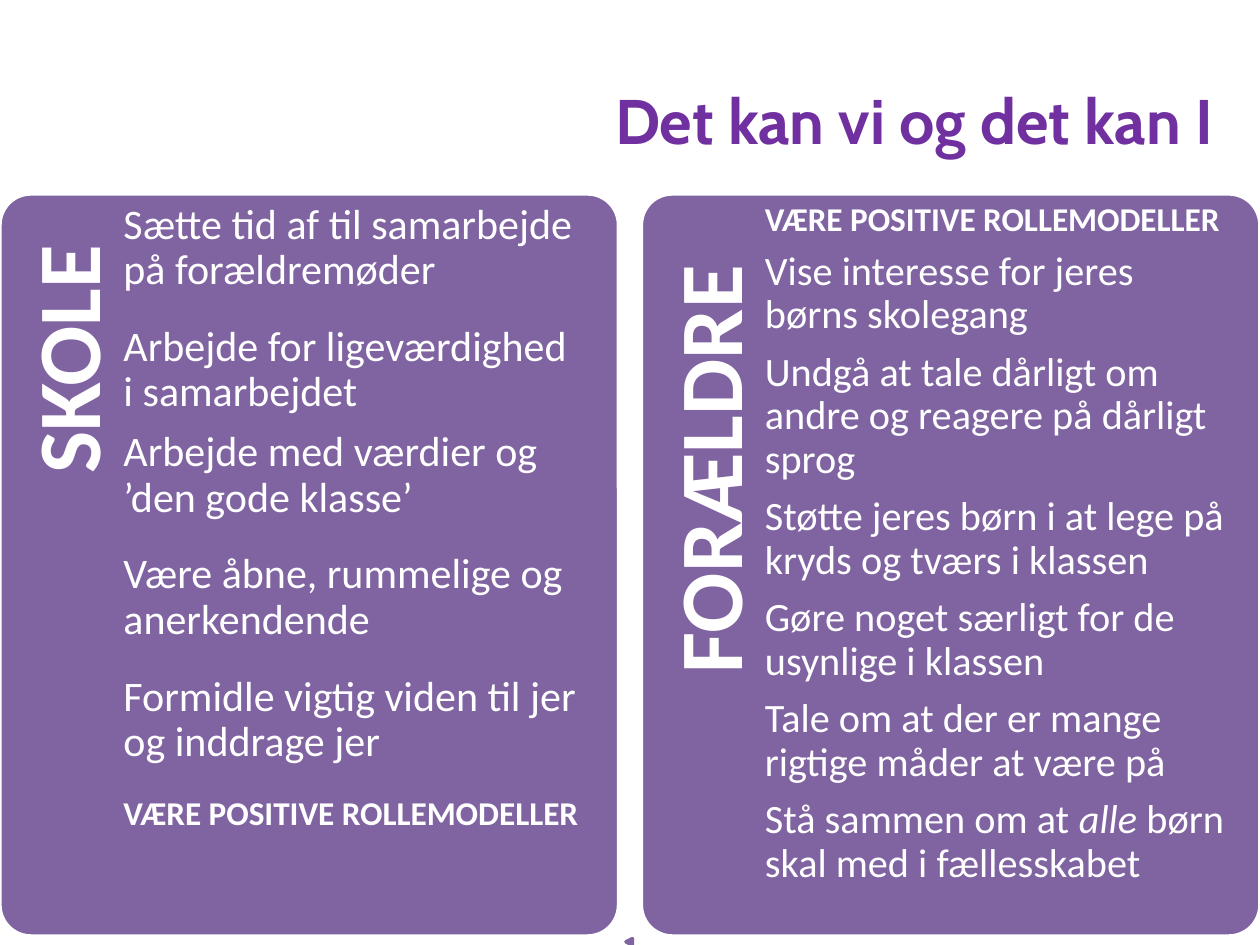
from pptx import Presentation
from pptx.dml.color import RGBColor
from pptx.enum.shapes import MSO_SHAPE as Shape
from pptx.enum.text import MSO_ANCHOR as Anchor, MSO_AUTO_SIZE as AutoSize, PP_ALIGN as Align
from pptx.util import Cm, Pt

WHITE = RGBColor(0xFF, 0xFF, 0xFF)
PANEL_PURPLE = RGBColor(0x80, 0x64, 0xA2)
TITLE_PURPLE = RGBColor(0x70, 0x30, 0xA0)

PANEL_TOP, PANEL_WIDTH, PANEL_HEIGHT = 3.91, 12.47, 14.96
LABEL_LENGTH, LABEL_DEPTH = 12.27, 2.49
WIDE_GAP = 18
TIGHT_RATIO = 0.35
ROLE_MODELS = "VÆRE POSITIVE ROLLEMODELLER"

SCHOOL = [
    ("Sætte tid af til samarbejde på forældremøder", WIDE_GAP),
    ("Arbejde for ligeværdighed i samarbejdet", 24 * TIGHT_RATIO),
    ("Arbejde med værdier og ’den gode klasse’", WIDE_GAP),
    ("Være åbne, rummelige og anerkendende", WIDE_GAP),
    ("Formidle vigtig viden til jer og inddrage jer", WIDE_GAP),
    (ROLE_MODELS, 0),
]
PARENTS = [(ROLE_MODELS, 19 * TIGHT_RATIO)] + [
    (text, 23 * TIGHT_RATIO)
    for text in (
        "Vise interesse for jeres børns skolegang",
        "Undgå at tale dårligt om andre og reagere på dårligt sprog",
        "Støtte jeres børn i at lege på kryds og tværs i klassen",
        "Gøre noget særligt for de usynlige i klassen",
        "Tale om at der er mange rigtige måder at være på",
        "Stå sammen om at *alle *børn skal med i fællesskabet",
    )
]


def set_font(para, name, size, color, bold=False):
    font = para.font
    font.name, font.size, font.bold = name, Pt(size), bold
    font.color.rgb = color


def set_margins(frame, left, top, right, bottom):
    frame.margin_left, frame.margin_top = Cm(left), Cm(top)
    frame.margin_right, frame.margin_bottom = Cm(right), Cm(bottom)


def add_title(page, text):
    title = page.shapes.title
    title.left, title.top, title.width, title.height = Cm(7.29), Cm(1.52), Cm(17.42), Cm(2.21)
    frame = title.text_frame
    frame.text = text
    frame.auto_size = AutoSize.NONE
    frame.vertical_anchor = Anchor.TOP
    para = frame.paragraphs[0]
    para.alignment = Align.RIGHT
    set_font(para, "Cabin", 36, TITLE_PURPLE, True)


def add_figure(page, kind, left, top, width, height, fill, line):
    figure = page.shapes.add_shape(kind, Cm(left), Cm(top), Cm(width), Cm(height))
    figure.shadow.inherit = False
    figure.fill.solid()
    figure.fill.fore_color.rgb = fill
    figure.line.color.rgb = line
    figure.line.width = Pt(2)
    return figure


def add_text_box(page, left, top, width, height):
    box = page.shapes.add_textbox(Cm(left), Cm(top), Cm(width), Cm(height))
    box.text_frame.word_wrap = True
    return box


def add_label(page, panel_left, text, end_margin):
    box = add_text_box(page, panel_left + (LABEL_DEPTH - LABEL_LENGTH) / 2, 8.79,
                       LABEL_LENGTH, LABEL_DEPTH)
    box.rotation = 270
    set_margins(box.text_frame, 0, 0.48, end_margin, 0)
    para = box.text_frame.paragraphs[0]
    para.text = text
    para.alignment = Align.RIGHT
    para.line_spacing = 0.9
    set_font(para, "Calibri", 51, WHITE, True)


def add_points(page, panel_left, points, size):
    frame = add_text_box(page, panel_left + 2.49, PANEL_TOP, 9.3, PANEL_HEIGHT).text_frame
    set_margins(frame, 0, 0.18, 0, 0)
    for index, (text, gap) in enumerate(points):
        para = frame.add_paragraph() if index else frame.paragraphs[0]
        para.line_spacing = 0.9
        para.space_after = Pt(gap)
        strong = text == ROLE_MODELS
        set_font(para, "Calibri", 19 if strong else size, WHITE, strong)
        for part, words in enumerate(text.split("*")):
            span = para.add_run()
            span.text = words
            if part % 2:
                span.font.italic = True


def add_panel(page, left, label, end_margin, points, size):
    panel = add_figure(page, Shape.ROUNDED_RECTANGLE, left, PANEL_TOP,
                       PANEL_WIDTH, PANEL_HEIGHT, PANEL_PURPLE, WHITE)
    panel.adjustments[0] = 0.05
    add_label(page, left, label, end_margin)
    add_points(page, left, points, size)


def main():
    deck = Presentation()
    deck.slide_width, deck.slide_height = Cm(25.4), Cm(19.05)
    page = deck.slides.add_slide(deck.slide_layouts[5])
    add_title(page, "Det kan vi og det kan I")
    add_panel(page, 0, "SKOLE", 1.04, SCHOOL, 24)
    add_panel(page, 25.4 - PANEL_WIDTH, "FORÆLDRE", 1.45, PARENTS, 23)
    marker = add_figure(page, Shape.FLOWCHART_EXTRACT, 12.62, 18.92, 0.13, 0.13,
                        WHITE, PANEL_PURPLE)
    marker.rotation = 270
    deck.save("out.pptx")


if __name__ == "__main__":
    main()
